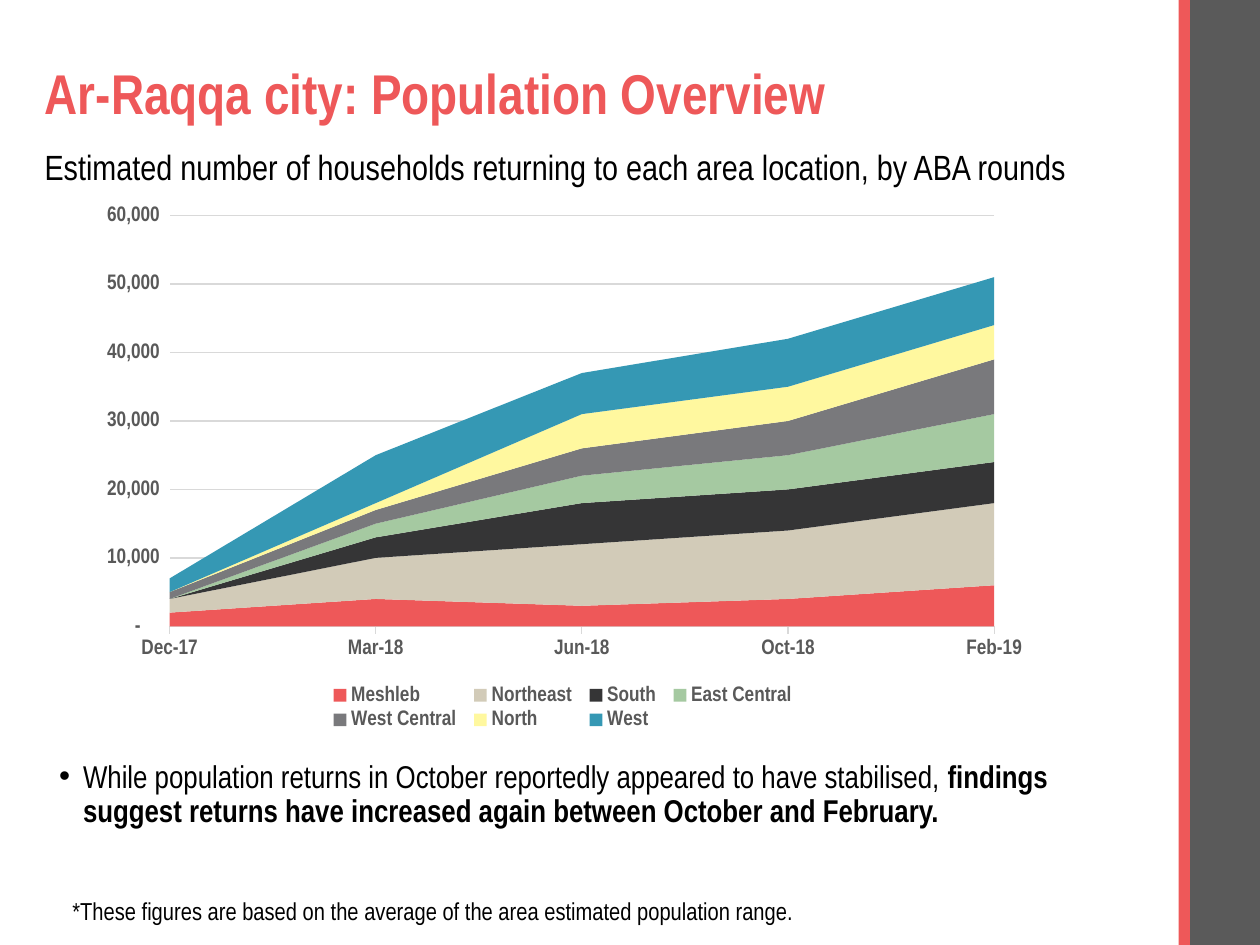
from dataclasses import dataclass

from lxml.etree import SubElement
from pptx import Presentation
from pptx.chart.data import CategoryChartData
from pptx.dml.color import RGBColor
from pptx.enum.chart import XL_CHART_TYPE, XL_LEGEND_POSITION, XL_TICK_MARK
from pptx.enum.shapes import MSO_SHAPE
from pptx.enum.text import MSO_ANCHOR, MSO_AUTO_SIZE, PP_ALIGN
from pptx.oxml import parse_xml
from pptx.oxml.ns import nsdecls, qn
from pptx.util import Cm, Pt


@dataclass(frozen=True)
class Theme:
    font: str = "Arial Narrow"
    accent: str = "EE5859"
    band: str = "5A5A5A"
    text: str = "000000"
    label: str = "595959"
    grid: str = "D9D9D9"
    title_size: int = 32
    subtitle_size: int = 20
    body_size: int = 18
    note_size: int = 14
    chart_size: int = 12


ROUNDS = ["Dec-17", "Mar-18", "Jun-18", "Oct-18", "Feb-19"]
HOUSEHOLDS = [
    ("Meshleb", "EE5859", [2000, 4000, 3000, 4000, 6000]),
    ("Northeast", "D2CBB8", [2000, 6000, 9000, 10000, 12000]),
    ("South", "353536", [0, 3000, 6000, 6000, 6000]),
    ("East Central", "A5C9A1", [0, 2000, 4000, 5000, 7000]),
    ("West Central", "79797C", [1000, 2000, 4000, 5000, 8000]),
    ("North", "FFF89F", [0, 1000, 5000, 5000, 5000]),
    ("West", "3598B4", [2000, 7000, 6000, 7000, 7000]),
]
NUMBER_FORMAT = '_(* #,##0_);_(* \\(#,##0\\);_(* "-"??_);_('


def format_font(font, theme, size, color, bold=False):
    font.name = theme.font
    font.size = Pt(size)
    font.bold = bold
    font.color.rgb = RGBColor.from_string(color)


def write_text(para, text, theme, *, size, color, bold=False, line_spacing=None):
    span = para.add_run()
    span.text = text
    format_font(span.font, theme, size, color, bold)
    para.alignment = PP_ALIGN.LEFT
    para.space_before = Pt(0)
    if line_spacing:
        para.line_spacing = line_spacing


def place(shape, left, top, width, height):
    shape.left, shape.top, shape.width, shape.height = map(Cm, (left, top, width, height))


def set_layout(element, index, inner=False, **fractions):
    """Fix a chart part's place, in fractions of the chart's size."""
    for old in element.findall(qn("c:layout")):
        element.remove(old)
    layout = parse_xml(f"<c:layout {nsdecls('c')}><c:manualLayout/></c:layout>")
    manual = layout[0]
    if inner:
        SubElement(manual, qn("c:layoutTarget"), val="inner")
    for mode in ("xMode", "yMode"):
        SubElement(manual, qn(f"c:{mode}"), val="edge")
    for name in ("x", "y", "w", "h"):
        SubElement(manual, qn(f"c:{name}"), val=str(fractions[name]))
    element.insert(index, layout)


class PageBuilder:
    """Adds styled elements to one page."""

    def __init__(self, page, theme):
        self.page = page
        self.theme = theme

    def band(self, left, width, height, color):
        bar = self.page.shapes.add_shape(
            MSO_SHAPE.RECTANGLE, Cm(left), 0, Cm(width), Cm(height))
        bar.shadow.inherit = False
        bar.fill.solid()
        bar.fill.fore_color.rgb = RGBColor.from_string(color)
        bar.line.fill.background()

    def title(self, text, *place_at):
        box = self.page.shapes.title
        place(box, *place_at)
        frame = box.text_frame
        frame.auto_size = MSO_AUTO_SIZE.NONE
        frame.vertical_anchor = MSO_ANCHOR.MIDDLE
        write_text(frame.paragraphs[0], text, self.theme, bold=True, line_spacing=0.9,
                   size=self.theme.title_size, color=self.theme.accent)

    def text(self, text, size, *place_at):
        box = self.page.shapes.add_textbox(*map(Cm, place_at))
        box.text_frame.word_wrap = True
        box.text_frame.auto_size = MSO_AUTO_SIZE.SHAPE_TO_FIT_TEXT
        write_text(box.text_frame.paragraphs[0], text, self.theme,
                   size=size, color=self.theme.text)

    def bullet(self, spans, *place_at):
        """Fill the body placeholder with one bullet of (text, bold) spans."""
        box = self.page.placeholders[1]
        place(box, *place_at)
        box.text_frame.auto_size = MSO_AUTO_SIZE.NONE
        para = box.text_frame.paragraphs[0]
        properties = para._p.get_or_add_pPr()
        properties.set("marL", str(Cm(0.48)))
        properties.set("indent", str(-Cm(0.48)))
        SubElement(properties, qn("a:buFont"), typeface="Arial")
        SubElement(properties, qn("a:buChar"), char="•")
        for text, bold in spans:
            write_text(para, text, self.theme, size=self.theme.body_size,
                       color=self.theme.text, bold=bold, line_spacing=0.9)

    def area_chart(self, categories, series, *place_at):
        theme = self.theme
        data = CategoryChartData(number_format="#,##0")
        data.categories = categories
        for name, _, values in series:
            data.add_series(name, values)
        chart = self.page.shapes.add_chart(
            XL_CHART_TYPE.AREA_STACKED, *map(Cm, place_at), data).chart
        chart.has_title = False
        format_font(chart.font, theme, theme.chart_size, theme.label, True)
        for plotted, (_, color, _) in zip(chart.plots[0].series, series):
            plotted.format.fill.solid()
            plotted.format.fill.fore_color.rgb = RGBColor.from_string(color)
        self.style_axes(chart)

        chart.has_legend = True
        legend = chart.legend
        legend.position = XL_LEGEND_POSITION.BOTTOM
        legend.include_in_layout = False
        format_font(legend.font, theme, theme.chart_size, theme.label, True)
        set_layout(legend._element, 1, x=0.25, y=0.9, w=0.5, h=0.1)
        plot_area = chart._chartSpace.chart.plotArea
        set_layout(plot_area, 0, inner=True, x=0.09, y=0.04, w=0.86, h=0.76)
        for crossing in plot_area.iter(qn("c:crossBetween")):
            crossing.set("val", "midCat")

    def style_axes(self, chart):
        theme = self.theme
        rounds, amounts = chart.category_axis, chart.value_axis
        rounds.has_major_gridlines = False
        rounds.major_tick_mark = XL_TICK_MARK.OUTSIDE
        amounts.has_major_gridlines = True
        amounts.major_tick_mark = XL_TICK_MARK.NONE
        amounts.minimum_scale, amounts.maximum_scale = 0, 60000
        amounts.major_unit = 10000
        amounts.tick_labels.number_format = NUMBER_FORMAT
        amounts.tick_labels.number_format_is_linked = False
        for axis in (rounds, amounts):
            format_font(axis.tick_labels.font, theme, theme.chart_size, theme.label, True)
        for line in (rounds.format.line, amounts.major_gridlines.format.line):
            line.color.rgb = RGBColor.from_string(theme.grid)
            line.width = Pt(0.75)
        amounts.format.line.fill.background()


def main():
    theme = Theme()
    deck = Presentation()
    deck.slide_width, deck.slide_height = Cm(25.4), Cm(19.05)
    page = deck.slides.add_slide(deck.slide_layouts[1])
    builder = PageBuilder(page, theme)

    builder.band(23.95, 1.45, 19.05, theme.band)
    builder.band(23.76, 0.23, 19.05, theme.accent)
    builder.title("Ar-Raqqa city: Population Overview", 0.65, 1.0, 22.07, 1.88)
    builder.text("Estimated number of households returning to each area location, by ABA rounds",
                 theme.subtitle_size, 0.65, 2.8, 22.71, 1.12)
    builder.area_chart(ROUNDS, HOUSEHOLDS, 1.68, 3.91, 19.33, 10.9)
    builder.bullet([
        ("While population returns in October reportedly appeared to have stabilised, ", False),
        ("findings suggest returns have increased again between October and February.", True),
    ], 0.94, 15.21, 21.49, 7.14)
    builder.text(
        "*These figures are based on the average of the area estimated population range.",
        theme.note_size, 1.21, 17.93, 22.71, 0.86)
    deck.save("out.pptx")


if __name__ == "__main__":
    main()
